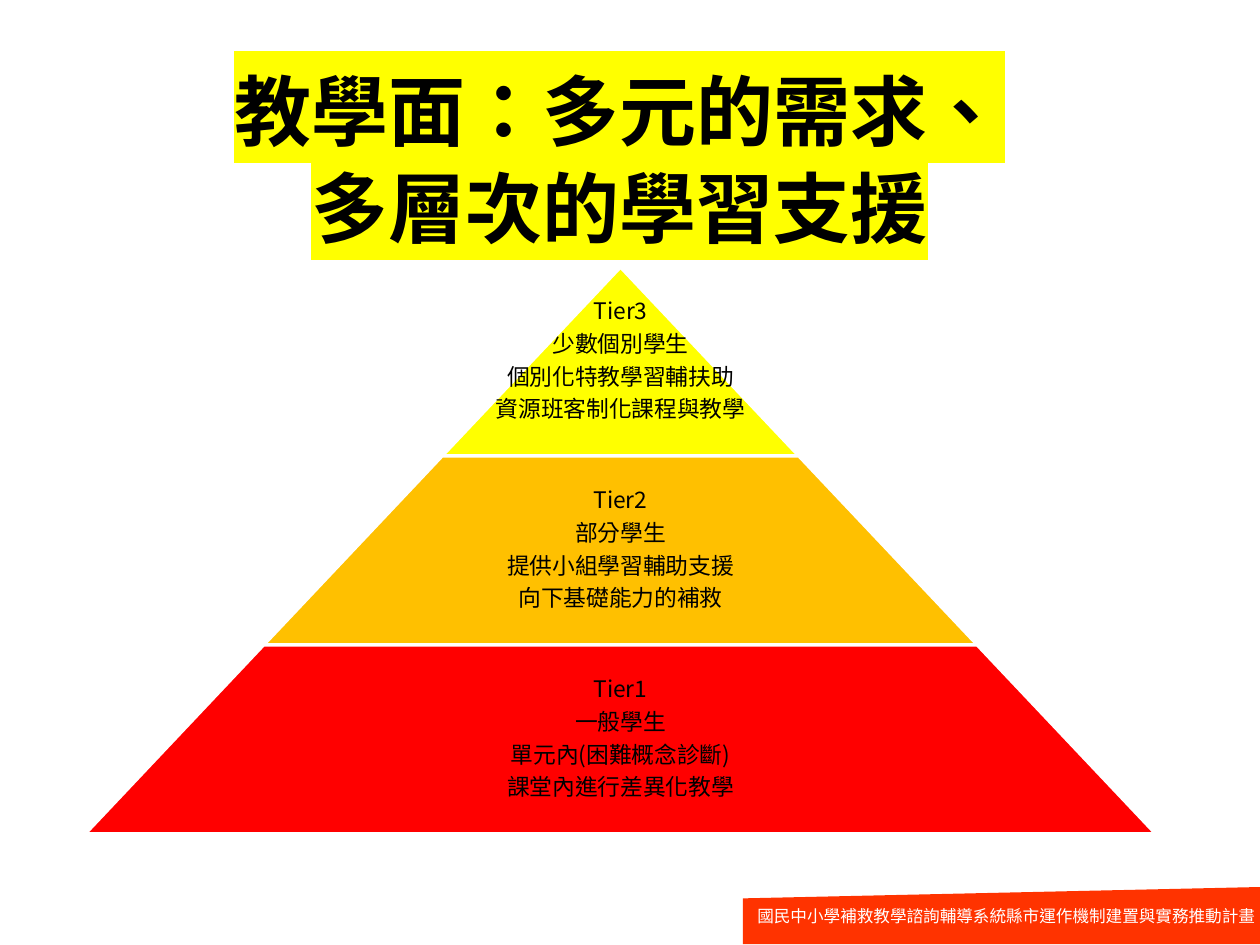
from dataclasses import dataclass

from lxml import etree
from pptx import Presentation
from pptx import util as u
from pptx.dml.color import RGBColor
from pptx.enum import shapes, text
from pptx.oxml import ns

SCALE = 914400 / 126


@dataclass(frozen=True)
class Theme:
    """Colours, typeface and type sizes of the slide."""
    font: str = "Noto Sans CJK JP"
    language: str = "zh-TW"
    ink: str = "000000"
    paper: str = "FFFFFF"
    highlight: str = "FFFF00"
    banner: str = "FF3300"
    tiers: tuple = ("FFFF00", "FFC000", "FF0000")
    title_size: float = 44
    tier_size: float = 13
    footer_size: float = 9.5


THEME = Theme()
TITLE = ("教學面：多元的需求、", "多層次的學習支援")
FOOTER = "國民中小學補救教學諮詢輔導系統縣市運作機制建置與實務推動計畫"
TIERS = (
    ("Tier3", "少數個別學生", "個別化特教學習輔扶助", "資源班客制化課程與教學"),
    ("Tier2", "部分學生", "提供小組學習輔助支援", "向下基礎能力的補救"),
    ("Tier1", "一般學生", "單元內(困難概念診斷)", "課堂內進行差異化教學"),
)


def px(length):
    """Turn pixels into EMU."""
    return u.Emu(round(length * SCALE))


def apply(target, values):
    """Set each named attribute of the target."""
    for name, value in values.items():
        setattr(target, name, value)


def add_span(para, words, size, color, bold=False):
    """Add a formatted run to a paragraph."""
    span = para.add_run()
    span.text = words
    apply(span.font, {"name": THEME.font, "size": u.Pt(size), "bold": bold})
    span.font.color.rgb = RGBColor.from_string(color)
    properties = span.font._element
    properties.set("lang", THEME.language)
    east_asian = etree.SubElement(properties, ns.qn("a:ea"))
    east_asian.set("typeface", THEME.font)
    return span


def highlight(span, color):
    """Lay a highlight colour behind a run."""
    mark = etree.Element(ns.qn("a:highlight"))
    etree.SubElement(mark, ns.qn("a:srgbClr")).set("val", color)
    span.font._element.find(ns.qn("a:solidFill")).addnext(mark)


def add_panel(page, kind, box, fill):
    """Add a flat filled preset shape."""
    panel = page.shapes.add_shape(kind, *map(px, box))
    panel.shadow.inherit = False
    panel.fill.solid()
    panel.fill.fore_color.rgb = RGBColor.from_string(fill)
    panel.line.fill.background()
    return panel


def add_label(page, box, lines, size, color, frame_format, para_format):
    """Add a wrapped text box with one paragraph for each line."""
    frame = page.shapes.add_textbox(*map(px, box)).text_frame
    apply(frame, {"word_wrap": True, **frame_format})
    for index, line in enumerate(lines):
        para = frame.paragraphs[0] if index == 0 else frame.add_paragraph()
        apply(para, para_format)
        add_span(para, line, size, color)


def add_footer(page, box):
    """Draw the slanted banner with the project name."""
    left, top, width, height = box
    add_panel(page, shapes.MSO_SHAPE.FLOWCHART_MANUAL_INPUT, box, THEME.banner)
    add_label(page, (left + 2, top + 13, width - 2, height - 23), [FOOTER],
              THEME.footer_size, THEME.paper, {"margin_right": 0}, {})


def add_title(page, box):
    """Fill the title placeholder with two highlighted lines."""
    title = page.shapes.title
    apply(title, dict(zip(("left", "top", "width", "height"), map(px, box))))
    apply(title.text_frame, {"vertical_anchor": text.MSO_ANCHOR.MIDDLE,
                             "auto_size": text.MSO_AUTO_SIZE.NONE,
                             "word_wrap": True})
    para = title.text_frame.paragraphs[0]
    apply(para, {"alignment": text.PP_ALIGN.CENTER, "line_spacing": 1.05})
    for index, line in enumerate(TITLE):
        if index:
            para.add_line_break()
        span = add_span(para, line, THEME.title_size, THEME.ink, True)
        highlight(span, THEME.highlight)


def add_pyramid(page, box):
    """Stack the tiers into a pyramid that fills the box."""
    left, top, width, height = box
    step, tier_height = width // len(TIERS), height // len(TIERS)
    frame_format = {"vertical_anchor": text.MSO_ANCHOR.MIDDLE}
    for side in ("left", "top", "right", "bottom"):
        frame_format["margin_" + side] = px(2)
    para_format = {"alignment": text.PP_ALIGN.CENTER, "line_spacing": 0.9,
                   "space_after": u.Pt(THEME.tier_size * 0.35)}
    for index, (lines, fill) in enumerate(zip(TIERS, THEME.tiers)):
        tier_width = step * (index + 1)
        label_width = max(step, round(tier_width * 0.65))
        tier_top = top + index * tier_height
        center = left + width / 2
        tier = add_panel(page, shapes.MSO_SHAPE.TRAPEZOID,
                         (center - tier_width / 2, tier_top, tier_width, tier_height), fill)
        tier.adjustments[0] = step / 2 / tier_height
        tier.line.color.rgb = RGBColor.from_string(THEME.paper)
        tier.line.width = u.Pt(2)
        add_label(page, (center - label_width / 2, tier_top, label_width, tier_height),
                  lines, THEME.tier_size, THEME.ink, frame_format, para_format)


def main():
    """Build and save the deck."""
    deck = Presentation()
    apply(deck, {"slide_width": px(1260), "slide_height": px(945)})
    page = deck.slides.add_slide(deck.slide_layouts.get_by_name("Title Only"))
    add_footer(page, (743, 887, 517, 57))
    add_title(page, (63, 34, 1113, 244))
    add_pyramid(page, (85, 267, 1071, 567))
    deck.save("out.pptx")


if __name__ == "__main__":
    main()
